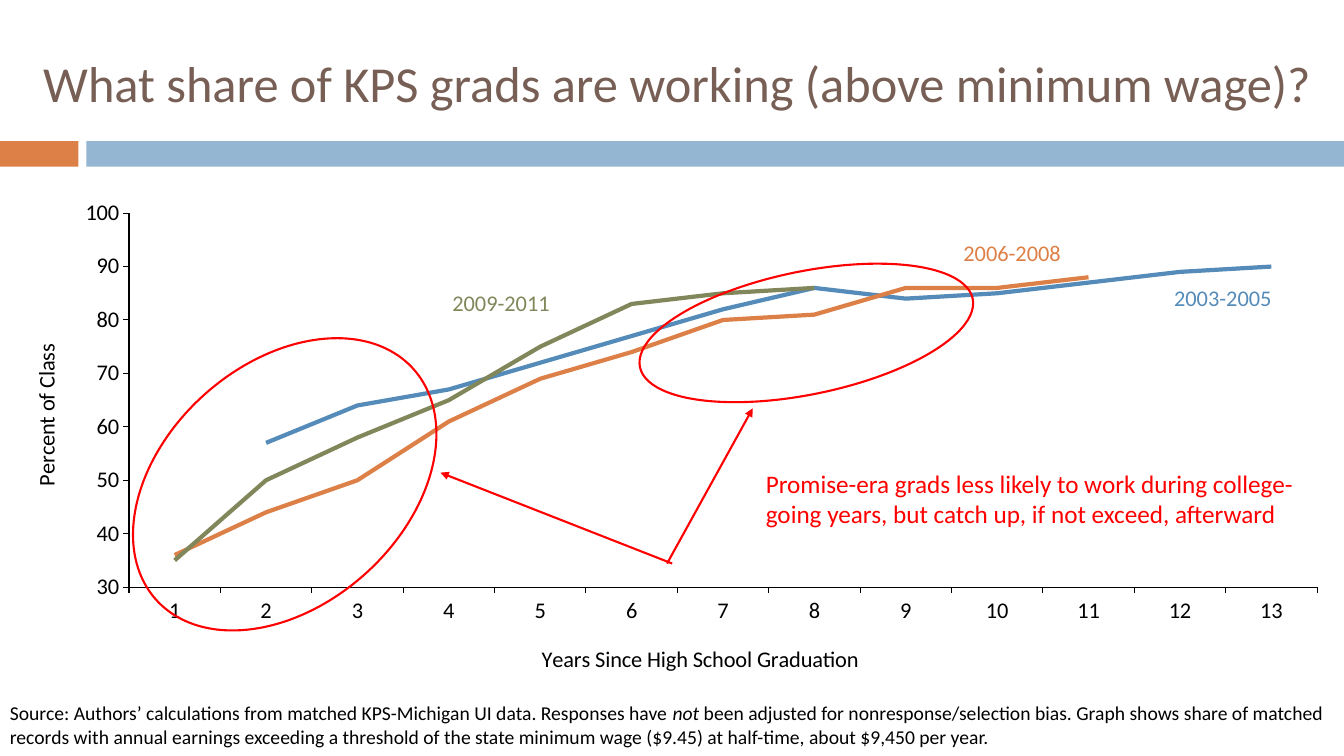
from lxml.etree import SubElement
from pptx import Presentation
from pptx.chart.data import CategoryChartData
from pptx.dml.color import RGBColor
from pptx.enum.chart import XL_CHART_TYPE as ChartType, XL_TICK_MARK as Tick
from pptx.enum.shapes import MSO_CONNECTOR as Link, MSO_SHAPE as Form
from pptx.enum.text import MSO_ANCHOR as Anchor
from pptx.oxml.ns import qn
from pptx.util import Cm, Pt

FONT = "Calibri"
BLACK, RED = "000000", "FF0000"
BLUE, ORANGE, OLIVE = "558BB8", "DD8047", "81875A"
COHORTS = [
    ("2003-2005", BLUE, (29.34, 7.04),
     [None, 57, 64, 67, 72, 77, 82, 86, 84, 85, 87, 89, 90]),
    ("2006-2008", ORANGE, (24.03, 5.89),
     [36, 44, 50, 61, 69, 74, 80, 81, 86, 86, 88, None, None]),
    ("2009-2011", OLIVE, (11.15, 7.16),
     [35, 50, 58, 65, 75, 83, 85, 86] + [None] * 5),
]


def rgb(code):
    """Turn a hex string into a colour."""
    return RGBColor.from_string(code)


def style_font(font, size, color):
    """Set typeface, size and colour of a font."""
    font.name, font.size, font.bold = FONT, Pt(size), False
    font.color.rgb = rgb(color)


def add_text(page, place, spans, size, color, anchor=Anchor.TOP):
    """Add a text box from (text, italic) spans."""
    box = page.shapes.add_textbox(*map(Cm, place))
    frame = box.text_frame
    frame.word_wrap = True
    frame.vertical_anchor = anchor
    para = frame.paragraphs[0]
    for text, italic in spans:
        span = para.add_run()
        span.text = text
        style_font(span.font, size, color)
        span.font.italic = italic


def add_bar(page, place, color):
    """Add a filled band without outline."""
    bar = page.shapes.add_shape(Form.RECTANGLE, *map(Cm, place))
    bar.shadow.inherit = False
    bar.fill.solid()
    bar.fill.fore_color.rgb = rgb(color)
    bar.line.fill.background()


def add_ring(page, place, angle):
    """Add a rotated red outline ellipse."""
    ring = page.shapes.add_shape(Form.OVAL, *map(Cm, place))
    ring.shadow.inherit = False
    ring.rotation = angle
    ring.fill.background()
    ring.line.color.rgb = rgb(RED)
    ring.line.width = Pt(1.5)


def add_arrow(page, start, end):
    """Add a red line with an arrowhead at its end."""
    arrow = page.shapes.add_connector(Link.STRAIGHT, *map(Cm, start + end))
    arrow.line.color.rgb = rgb(RED)
    arrow.line.width = Pt(1.5)
    SubElement(arrow.get_or_add_ln(), qn("a:tailEnd"), type="triangle")
    SubElement(arrow.element.spPr, qn("a:effectLst"))


def set_layout(parent, index, **settings):
    """Give a chart part a manual layout."""
    for old in parent.findall(qn("c:layout")):
        parent.remove(old)
    layout = SubElement(parent, qn("c:layout"))
    parent.insert(index, layout)
    manual = SubElement(layout, qn("c:manualLayout"))
    for name, value in settings.items():
        SubElement(manual, qn(f"c:{name}"), val=str(value))


def style_axis(axis, title, x, y):
    """Style an axis and place its title."""
    axis.has_major_gridlines = False
    axis.major_tick_mark, axis.minor_tick_mark = Tick.OUTSIDE, Tick.NONE
    axis.format.line.color.rgb = rgb(BLACK)
    axis.format.line.width = Pt(0.75)
    style_font(axis.tick_labels.font, 16, BLACK)
    span = axis.axis_title.text_frame.paragraphs[0].add_run()
    span.text = title
    style_font(span.font, 16, BLACK)
    set_layout(axis.axis_title.element, 1, xMode="edge", yMode="edge", x=x, y=y)


def add_share_chart(page, place):
    """Add the line chart of working shares by cohort."""
    data = CategoryChartData()
    data.categories = [str(year) for year in range(1, 14)]
    for name, _, _, shares in COHORTS:
        data.add_series(name, shares)
    chart = page.shapes.add_chart(ChartType.LINE, *map(Cm, place), data).chart
    chart.has_legend = chart.has_title = False
    style_font(chart.font, 16, BLACK)
    chart.plots[0].vary_by_categories = False
    for series, (_, color, _, _) in zip(chart.plots[0].series, COHORTS):
        series.smooth = False
        series.format.line.color.rgb = rgb(color)
        series.format.line.width = Pt(3)
    style_axis(chart.category_axis, "Years Since High School Graduation", 0.4, 0.9)
    shares_axis = chart.value_axis
    style_axis(shares_axis, "Percent of Class", 0.02, 0.3)
    shares_axis.minimum_scale, shares_axis.maximum_scale = 30, 100
    shares_axis.major_unit = 10
    shares_axis.tick_labels.number_format = "#,##0"
    shares_axis.tick_labels.number_format_is_linked = False
    set_layout(chart.element.chart.plotArea, 0, layoutTarget="inner",
               xMode="edge", yMode="edge", x=0.096, y=0.047, w=0.884, h=0.748)


def main():
    """Build the slide and save it."""
    deck = Presentation()
    deck.slide_width, deck.slide_height = Cm(33.87), Cm(19.05)
    page = deck.slides.add_slide(deck.slide_layouts[6])
    add_bar(page, (0, 3.56, 1.98, 0.64), ORANGE)
    add_bar(page, (2.18, 3.56, 31.69, 0.64), "94B6D2")
    add_text(page, (0.84, 0.64, 33.02, 2.87),
             [("What share of KPS grads are working (above minimum wage)?", False)],
             36, "775F55", Anchor.MIDDLE)
    add_text(page, (0, 17.55, 33.87, 1.45), [
        ("Source: Authors’ calculations from matched KPS-Michigan UI data. "
         "Responses have ", False),
        ("not ", True),
        ("been adjusted for nonresponse/selection bias. Graph shows share of "
         "matched records with annual earnings exceeding a threshold of the state "
         "minimum wage ($9.45) at half-time, about $9,450 per year.", False),
    ], 14, BLACK)
    add_share_chart(page, (0, 4.78, 33.87, 12.6))
    add_ring(page, (4.14, 7.85, 6.07, 8.71), 48.1)
    add_ring(page, (18.77, 4.11, 3.1, 8.56), 78.4)
    for name, color, corner, _ in COHORTS:
        add_text(page, corner + (3.63, 1.24), [(name, False)], 16, color)
    add_arrow(page, (16.94, 14.2), (11.1, 11.91))
    add_arrow(page, (16.81, 14.2), (18.97, 10.29))
    add_text(page, (19.05, 11.68, 14.15, 2.08),
             [("Promise-era grads less likely to work during college-going years, "
               "but catch up, if not exceed, afterward", False)], 18, RED)
    deck.save("out.pptx")


if __name__ == "__main__":
    main()
